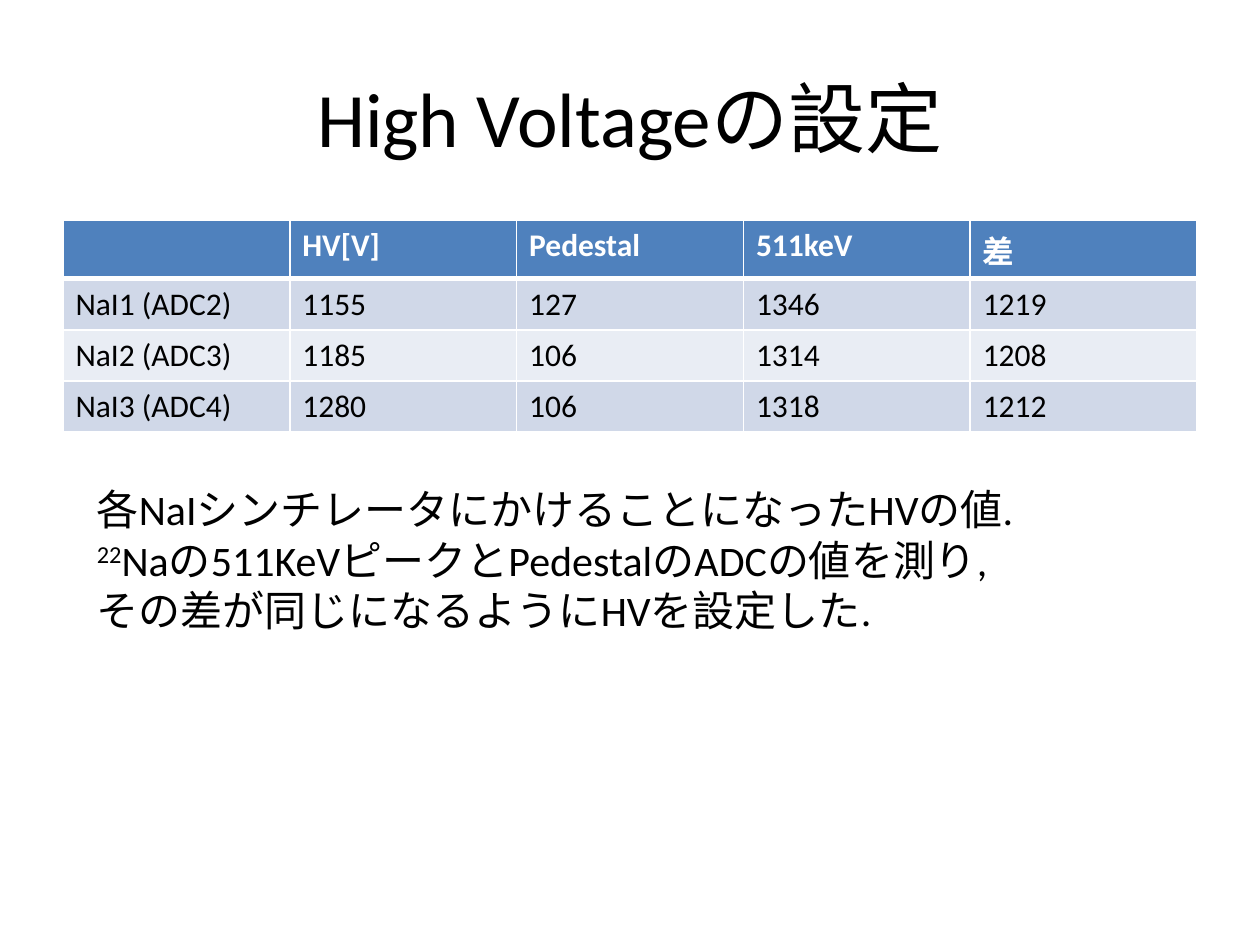
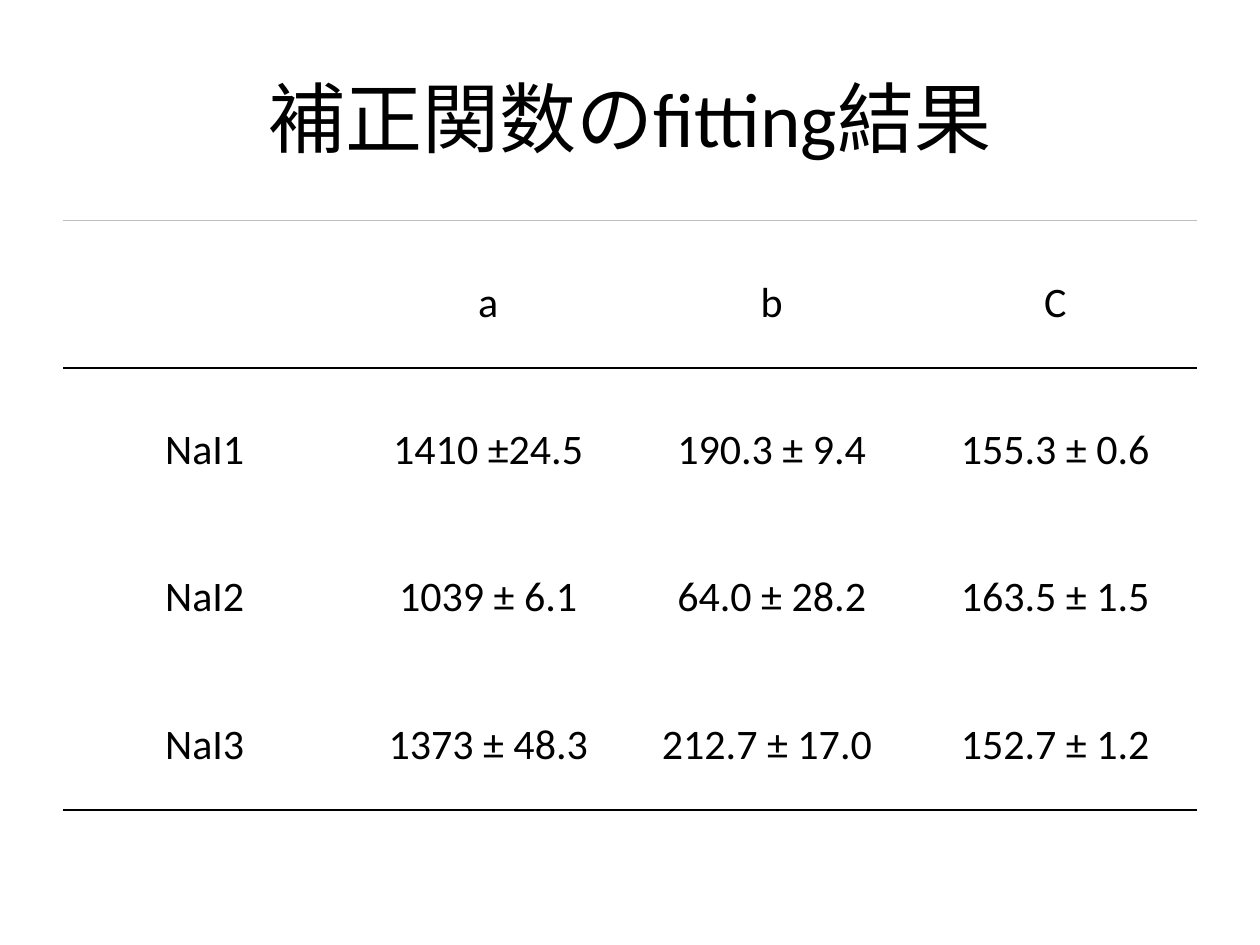
"""Build two slides on NaI scintillator voltages and correction fit results."""
from lxml import etree
from pptx import Presentation
from pptx.dml.color import RGBColor
from pptx.enum import text
from pptx.oxml import ns
from pptx.util import Inches, Pt

FONT = "Calibri"
BLACK, WHITE = "000000", "FFFFFF"
HEADER_BLUE, BANDS = "4F81BD", ("D0D8E8", "E9EDF4")
TABLE_LEFT, TABLE_TOP, TABLE_WIDTH = 0.5, 1.75, 9

VOLTAGE_TITLE = "High Voltageの設定"
VOLTAGES = [
    ("", "HV[V]", "Pedestal", "511keV", "差"),
    ("NaI1 (ADC2)", "1155", "127", "1346", "1219"),
    ("NaI2 (ADC3)", "1185", "106", "1314", "1208"),
    ("NaI3 (ADC4)", "1280", "106", "1318", "1212"),
]
EXPLANATION = [
    ("", "各NaIシンチレータにかけることになったHVの値."),
    ("22", "Naの511KeVピークとPedestalのADCの値を測り,"),
    ("", "その差が同じになるようにHVを設定した."),
]

FIT_TITLE = "補正関数のfitting結果"
FITS = [
    ("", "a", "b", "C"),
    ("NaI1", "1410 ±24.5", "190.3 ± 9.4", "155.3 ± 0.6"),
    ("NaI2", "1039 ± 6.1", "64.0 ± 28.2", "163.5 ± 1.5"),
    ("NaI3", "1373 ± 48.3", "212.7 ± 17.0 ", "152.7 ± 1.2"),
]


def rgb(value):
    return RGBColor.from_string(value)


def style(run, size, color=BLACK, bold=False):
    run.font.name = FONT
    run.font.size = Pt(size)
    run.font.bold = bold
    run.font.color.rgb = rgb(color)


def set_borders(cell, borders):
    properties = cell._tc.get_or_add_tcPr()
    for side in "LRTB":
        color, width = borders.get(side, (None, 0))
        line = etree.SubElement(properties, ns.qn(f"a:ln{side}"), w=str(Pt(width)))
        if color:
            fill = etree.SubElement(line, ns.qn("a:solidFill"))
            etree.SubElement(fill, ns.qn("a:srgbClr"), val=color)
        else:
            etree.SubElement(line, ns.qn("a:noFill"))


def add_titled_slide(deck, heading):
    slide = deck.slides.add_slide(deck.slide_layouts[5])
    title = slide.shapes.title
    title.left, title.top = Inches(0.5), Inches(0.3)
    title.width, title.height = Inches(9), Inches(1.25)
    title.text_frame.text = heading
    title.text_frame.vertical_anchor = text.MSO_ANCHOR.MIDDLE
    paragraph = title.text_frame.paragraphs[0]
    paragraph.alignment = text.PP_ALIGN.CENTER
    style(paragraph.runs[0], 44)
    return slide


def add_grid(slide, rows, height, size, look):
    """Add a table; look(row) gives fill, text colour, bold and borders."""
    table = slide.shapes.add_table(
        len(rows), len(rows[0]), Inches(TABLE_LEFT), Inches(TABLE_TOP),
        Inches(TABLE_WIDTH), Inches(height)).table
    table.first_row = table.horz_banding = False
    for r, row in enumerate(rows):
        fill, color, bold, borders = look(r)
        for c, value in enumerate(row):
            cell = table.cell(r, c)
            set_borders(cell, borders)
            if fill:
                cell.fill.solid()
                cell.fill.fore_color.rgb = rgb(fill)
            else:
                cell.fill.background()
            if value:
                cell.text_frame.text = value
                style(cell.text_frame.paragraphs[0].runs[0], size, color, bold)
    return table


def voltage_look(row):
    borders = dict.fromkeys("LRTB", (WHITE, 1))
    if row == 0:
        return HEADER_BLUE, WHITE, True, borders | {"B": (WHITE, 3)}
    if row == 1:
        borders["T"] = (WHITE, 3)
    return BANDS[(row - 1) % 2], BLACK, False, borders


def fit_look(row):
    rule = (BLACK, 1)
    borders = {0: {"T": ("BFBFBF", 0.5), "B": rule}, 1: {"T": rule},
               len(FITS) - 1: {"B": rule}}
    return None, BLACK, False, borders.get(row, {})


def add_explanation(slide):
    frame = slide.shapes.add_textbox(
        Inches(0.67), Inches(3.79), Inches(8.98), Inches(1.31)).text_frame
    frame.word_wrap = True
    for i, (raised, sentence) in enumerate(EXPLANATION):
        paragraph = frame.add_paragraph() if i else frame.paragraphs[0]
        paragraph.text = sentence
        if raised:
            paragraph.text = raised
            paragraph.runs[0].font._element.set("baseline", "30000")
            paragraph.add_run().text = sentence
        for run in paragraph.runs:
            style(run, 24)


def main():
    deck = Presentation()
    deck.slide_width, deck.slide_height = Inches(10), Inches(7.5)

    voltage = add_titled_slide(deck, VOLTAGE_TITLE)
    add_grid(voltage, VOLTAGES, 1.62, 18, voltage_look)
    add_explanation(voltage)

    fit = add_titled_slide(deck, FIT_TITLE)
    fits = add_grid(fit, FITS, 4.68, 24, fit_look)
    for cell in fits.iter_cells():
        cell.margin_top = Inches(0.45)
        cell.text_frame.paragraphs[0].alignment = text.PP_ALIGN.CENTER

    deck.save("out.pptx")


if __name__ == "__main__":
    main()
